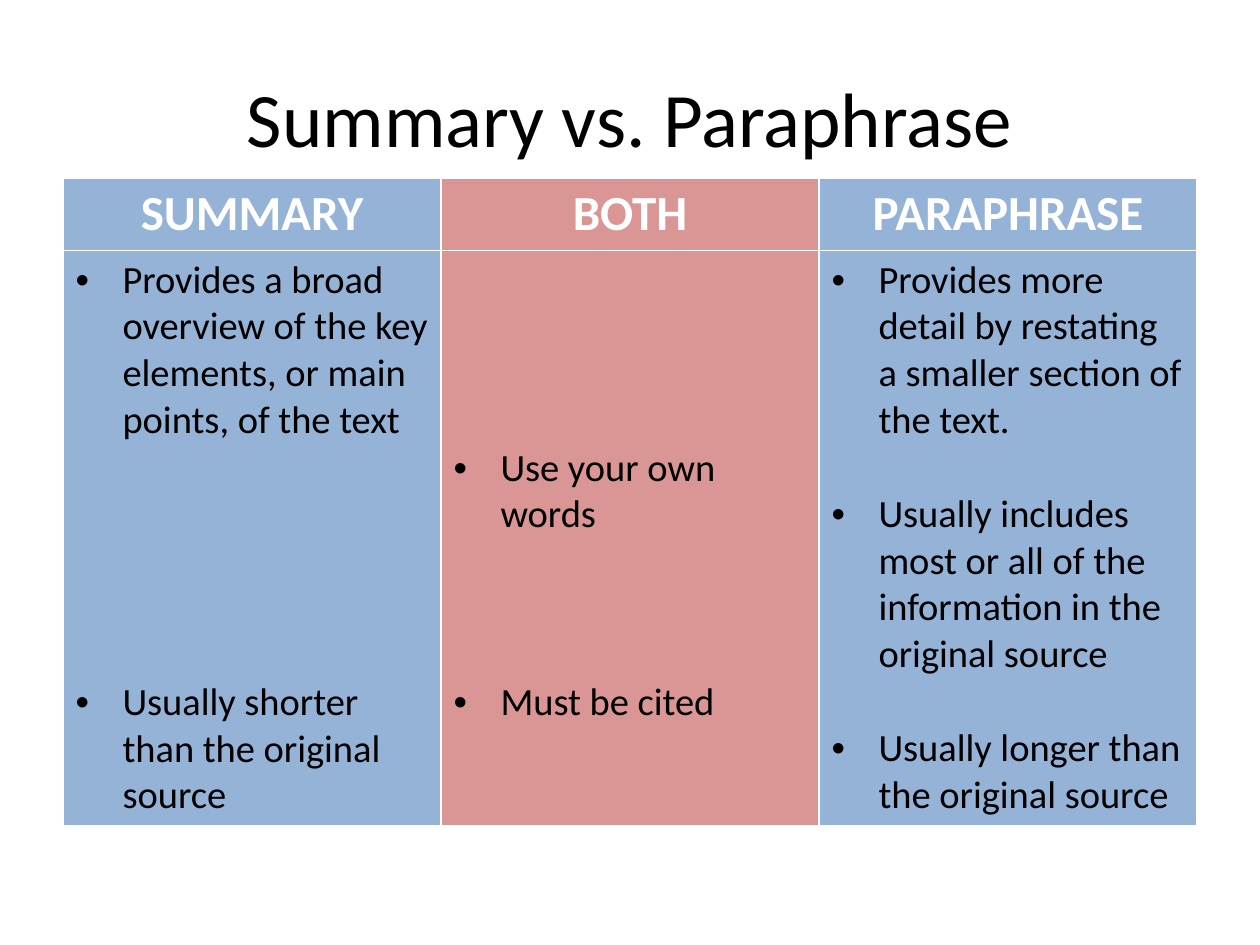
from dataclasses import dataclass

from lxml import etree
from pptx import Presentation
from pptx.dml.color import RGBColor
from pptx.enum.text import MSO_ANCHOR, PP_ALIGN
from pptx.oxml.ns import qn
from pptx.util import Emu, Pt

CENTER = PP_ALIGN.CENTER
LEFT = PP_ALIGN.LEFT
MIDDLE = MSO_ANCHOR.MIDDLE
SCALE = 914400 / 126
LINE = 47
INSET = 6
INDENT = 47


@dataclass(frozen=True)
class Theme:
    face: str = "Calibri"
    ink: str = "000000"
    white: str = "FFFFFF"
    blue: str = "95B3D7"
    rose: str = "D99694"
    title: int = 44
    head: int = 28
    body: int = 22


@dataclass(frozen=True)
class Point:
    text: str
    gap: int = 0


@dataclass(frozen=True)
class Column:
    head: str
    fill: str
    points: tuple[Point, ...]
    drop: int = 0


THEME = Theme()
COLUMNS = (
    Column("SUMMARY", THEME.blue, (
        Point("Provides a broad overview of the key elements, or main points, of the text"),
        Point("Usually shorter than the original source", 5),
    )),
    Column("BOTH", THEME.rose, (
        Point("Use your own words"),
        Point("Must be cited", 3),
    ), drop=4),
    Column("PARAPHRASE", THEME.blue, (
        Point("Provides more detail by restating a smaller section of the text."),
        Point("Usually includes most or all of the information in the original source", 1),
        Point("Usually longer than the original source", 1),
    )),
)


def px(count: int) -> Emu:
    return Emu(round(count * SCALE))


def style(para, size: int, color: str, align=LEFT, bold: bool = False) -> None:
    para.alignment = align
    font = para.font
    font.name, font.size, font.bold = THEME.face, Pt(size), bold
    font.color.rgb = RGBColor.from_string(color)


def bullet(para) -> None:
    props = para._p.get_or_add_pPr()
    props.set("marL", str(px(INDENT)))
    props.set("indent", str(-px(INDENT)))
    etree.SubElement(props, qn("a:buFont"), typeface="Arial")
    etree.SubElement(props, qn("a:buChar"), char="•")


def paint(cell, color: str) -> None:
    cell.fill.solid()
    cell.fill.fore_color.rgb = RGBColor.from_string(color)


def draw_title(slide, text: str) -> None:
    title = slide.shapes.title
    title.left, title.top, title.width, title.height = map(px, (63, 38, 1134, 158))
    title.text_frame.text = text
    title.text_frame.vertical_anchor = MIDDLE
    style(title.text_frame.paragraphs[0], THEME.title, THEME.ink, CENTER)


def draw_column(table, index: int, column: Column) -> None:
    head, body = table.cell(0, index), table.cell(1, index)
    paint(head, column.fill)
    paint(body, column.fill)
    head.text = column.head
    style(head.text_frame.paragraphs[0], THEME.head, THEME.white, CENTER, True)
    body.margin_top = px(INSET + column.drop * LINE)
    frame = body.text_frame
    for order, point in enumerate(column.points):
        para = frame.add_paragraph() if order else frame.paragraphs[0]
        para.text = point.text
        bullet(para)
        para.space_before = px(point.gap * LINE)
        style(para, THEME.body, THEME.ink)


def draw_table(slide, columns: tuple[Column, ...]) -> None:
    area = map(px, (63, 178, 1134, 646))
    table = slide.shapes.add_table(2, len(columns), *area).table
    for row, height in zip(table.rows, (72, 574)):
        row.height = px(height)
    for index, column in enumerate(columns):
        draw_column(table, index, column)


def main() -> None:
    deck = Presentation()
    deck.slide_width, deck.slide_height = px(1260), px(945)
    slide = deck.slides.add_slide(deck.slide_layouts[5])
    draw_title(slide, "Summary vs. Paraphrase")
    draw_table(slide, COLUMNS)
    deck.save("out.pptx")


if __name__ == "__main__":
    main()
